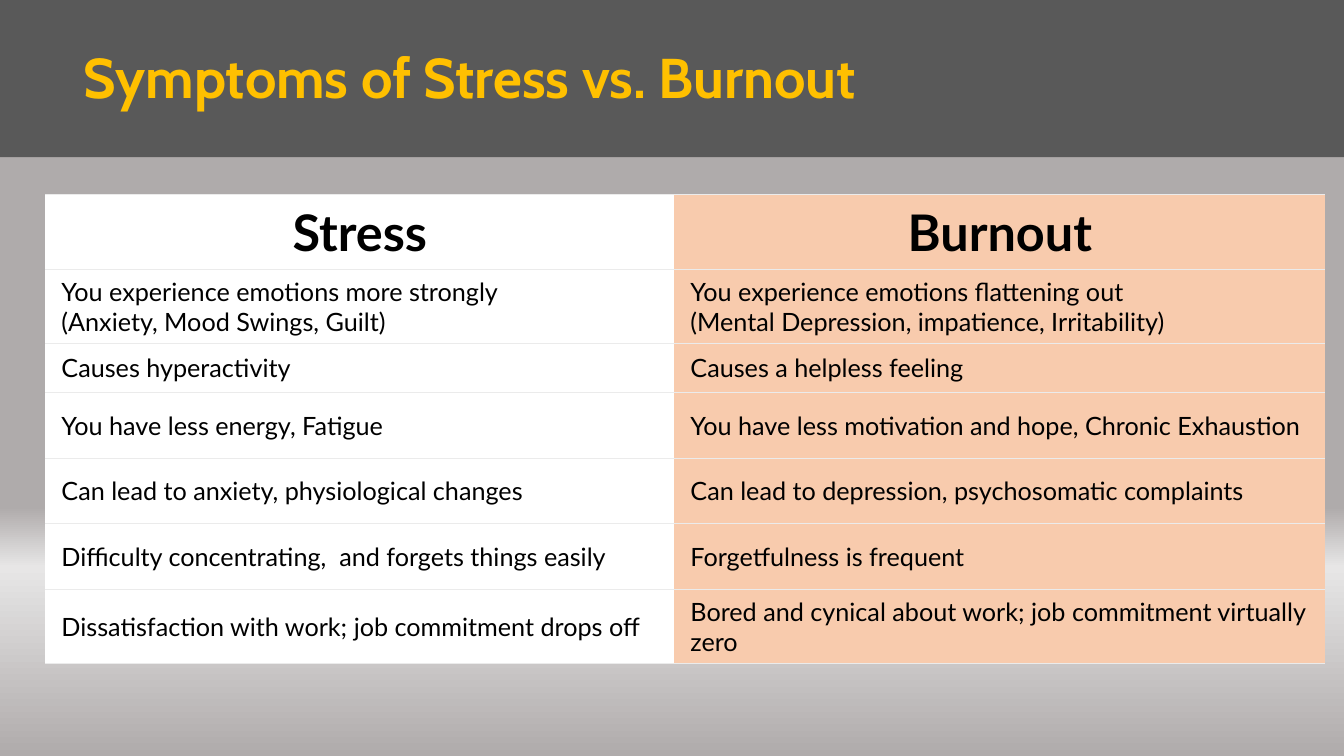
"""Build the slide comparing symptoms of stress and burnout."""
from pptx import Presentation
from pptx.dml.color import RGBColor
from pptx.enum.shapes import MSO_SHAPE
from pptx.enum.text import MSO_ANCHOR, PP_ALIGN
from pptx.oxml import parse_xml
from pptx.oxml.ns import nsdecls, qn
from pptx.util import Pt

TITLE = "Symptoms of Stress vs. Burnout"
ROWS = [
    ("Stress", "Burnout"),
    ("You experience emotions more strongly\v(Anxiety, Mood Swings, Guilt)",
     "You experience emotions flattening out\v(Mental Depression, impatience, Irritability)"),
    ("Causes hyperactivity", "Causes a helpless feeling"),
    ("You have less energy, Fatigue",
     "You have less motivation and hope, Chronic Exhaustion"),
    ("Can lead to anxiety, physiological changes",
     "Can lead to depression, psychosomatic complaints"),
    ("Difficulty concentrating,  and forgets things easily", "Forgetfulness is frequent"),
    ("Dissatisfaction with work; job commitment drops off",
     "Bored and cynical about work; job commitment virtually zero"),
]
ROW_HEIGHTS = [43.2, 46.8, 35, 46.8, 46.8, 46.8, 46.8]
COL_WIDTHS = [449.3, 465.1]
COL_FILLS = ["FFFFFF", "F8CBAD"]
BACKGROUND = [(0, "AFABAB"), (67, "AFABAB"), (75, "E7E6E6"), (100, "AFABAB")]
RULE = "EBEBEB"


def paint(fill, color):
    fill.solid()
    fill.fore_color.rgb = RGBColor.from_string(color)


def style(p, font, size, color, bold, align):
    p.alignment = align
    p.font.name, p.font.size, p.font.bold = font, Pt(size), bold
    paint(p.font.fill, color)


def set_borders(cell):
    rule = f'<a:solidFill><a:srgbClr val="{RULE}"/></a:solidFill>'
    sides = [("L", "<a:noFill/>"), ("R", "<a:noFill/>"), ("T", rule), ("B", rule)]
    tc_pr = cell.fill and cell.text_frame and cell.text_frame._txBody.getparent().get_or_add_tcPr()
    for i, (side, line) in enumerate(sides):
        tc_pr.insert(i, parse_xml(
            f'<a:ln{side} {nsdecls("a")} w="{Pt(0.75)}">{line}</a:ln{side}>'))


def set_background(s):
    fill = s.background.fill
    fill.gradient()
    fill.gradient_angle = 270
    stops = s.element.find(".//" + qn("a:gsLst"))
    stops.clear()
    for pos, color in BACKGROUND:
        stops.append(parse_xml(
            f'<a:gs {nsdecls("a")} pos="{pos * 1000}"><a:srgbClr val="{color}"/></a:gs>'))


def add_header(s):
    band = s.shapes.add_shape(MSO_SHAPE.RECTANGLE, 0, 0, Pt(960), Pt(112.3))
    band.shadow.inherit = False
    paint(band.fill, "595959")
    band.line.fill.background()
    title = s.shapes.title
    title.element.addprevious(band.element)
    title.left, title.top, title.width, title.height = Pt(52.6), Pt(26.6), Pt(840), Pt(55.4)
    tf = title.text_frame
    tf.text = TITLE
    tf.vertical_anchor = MSO_ANCHOR.MIDDLE
    style(tf.paragraphs[0], "Cabin", 40, "FFC000", True, PP_ALIGN.LEFT)


def add_comparison(s):
    table = s.shapes.add_table(len(ROWS), len(COL_WIDTHS), Pt(32.4), Pt(139),
                               Pt(sum(COL_WIDTHS)), Pt(sum(ROW_HEIGHTS))).table
    table.horz_banding = False
    for col, width in zip(table.columns, COL_WIDTHS):
        col.width = Pt(width)
    for r, (texts, height) in enumerate(zip(ROWS, ROW_HEIGHTS)):
        table.rows[r].height = Pt(height)
        size, align = (36, PP_ALIGN.CENTER) if r == 0 else (18, PP_ALIGN.LEFT)
        for c, text in enumerate(texts):
            cell = table.cell(r, c)
            cell.text = text
            cell.vertical_anchor = MSO_ANCHOR.MIDDLE
            cell.margin_left = cell.margin_right = Pt(11.5)
            cell.margin_top = cell.margin_bottom = Pt(5)
            paint(cell.fill, COL_FILLS[c])
            set_borders(cell)
            style(cell.text_frame.paragraphs[0], "Lato", size, "000000", r == 0, align)


def main():
    prs = Presentation()
    prs.slide_width, prs.slide_height = Pt(960), Pt(540)
    s = prs.slides.add_slide(prs.slide_layouts[5])
    set_background(s)
    add_header(s)
    add_comparison(s)
    prs.save("out.pptx")


if __name__ == "__main__":
    main()
